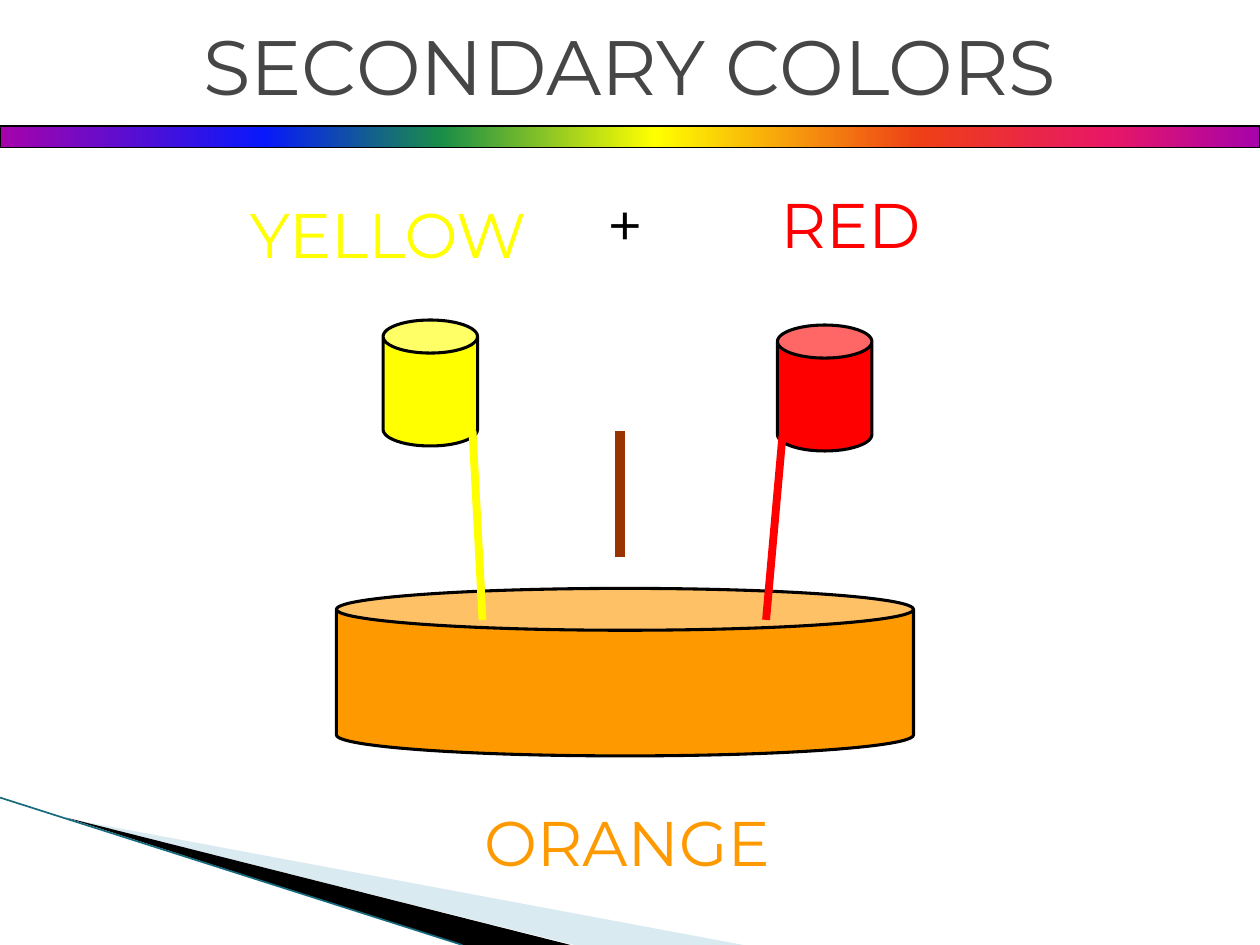
from copy import deepcopy
from typing import NamedTuple

from pptx import Presentation
from pptx.dml.color import RGBColor
from pptx.enum.shapes import MSO_CONNECTOR, MSO_SHAPE
from pptx.enum.text import MSO_ANCHOR, MSO_AUTO_SIZE, PP_ALIGN
from pptx.oxml.ns import qn
from pptx.util import Inches, Pt

CAN, RECT = MSO_SHAPE.CAN, MSO_SHAPE.RECTANGLE
STRAIGHT = MSO_CONNECTOR.STRAIGHT
CENTER, MIDDLE = PP_ALIGN.CENTER, MSO_ANCHOR.MIDDLE
FIXED = MSO_AUTO_SIZE.NONE

BLACK, YELLOW, RED, ORANGE = "000000", "FFFF00", "FF0000", "FF9900"
FONT = "Montserrat"


class Box(NamedTuple):
    left: float
    top: float
    width: float
    height: float


class Can(NamedTuple):
    box: Box
    color: str
    lip: float


class Label(NamedTuple):
    text: str
    box: Box
    color: str


class Stroke(NamedTuple):
    start: tuple[float, float]
    end: tuple[float, float]
    color: str
    weight: float


class Wedge(NamedTuple):
    points: list[tuple[float, float]]
    color: str


WEDGES = [
    Wedge([(0.55, 6.5), (5.9, 7.5), (4.56, 7.5)], "D9EAF1"),
    Wedge([(0.53, 6.49), (4.53, 7.5), (3.67, 7.5)], BLACK),
]
EDGE = Stroke((0, 6.33), (3.67, 7.5), "156B7D", 0.95)
CANS = [
    Can(Box(3.04, 2.54, 0.75, 1), YELLOW, 0.35),
    Can(Box(6.17, 2.58, 0.75, 1), RED, 0.35),
    Can(Box(2.67, 4.67, 4.58, 1.33), ORANGE, 0.25),
]
LABELS = [
    Label("YELLOW", Box(2.08, 1.5, 2, 0.71), YELLOW),
    Label("+", Box(4.75, 1.42, 0.42, 0.71), BLACK),
    Label("RED", Box(6, 1.42, 1.5, 0.71), RED),
    Label("ORANGE", Box(4, 6.33, 1.95, 0.71), ORANGE),
]
STROKES = [
    Stroke((4.92, 3.42), (4.92, 4.42), "993300", 6),
    Stroke((3.75, 3.42), (3.83, 4.92), YELLOW, 4.5),
    Stroke((6.21, 3.46), (6.08, 4.92), RED, 4.5),
]
RAINBOW = [
    (0, "A603AB"), (0.21, "0819FB"), (0.35, "1A8D48"), (0.52, "FFFF00"),
    (0.73, "EE3F17"), (0.88, "E81766"), (1, "A603AB"),
]


def rgb(color: str) -> RGBColor:
    return RGBColor.from_string(color)


def lengths(values) -> list[int]:
    return [Inches(value) for value in values]


def put(target, formats: dict) -> None:
    for name, value in formats.items():
        setattr(target, name, value)


def outline(shape, color: str, weight: float) -> None:
    shape.line.color.rgb = rgb(color)
    shape.line.width = Pt(weight)


def write(shape, text: str, color: str, size: float, wrap: bool) -> None:
    frame = shape.text_frame
    put(frame, {"text": text, "word_wrap": wrap, "auto_size": FIXED})
    para = frame.paragraphs[0]
    para.alignment = CENTER
    put(para.runs[0].font, {"name": FONT, "size": Pt(size)})
    para.runs[0].font.color.rgb = rgb(color)


def draw_wedge(slide, wedge: Wedge) -> None:
    first, *rest = [lengths(point) for point in wedge.points]
    path = slide.shapes.build_freeform(*first)
    path.add_line_segments(rest, close=True)
    shape = path.convert_to_shape()
    shape.shadow.inherit = False
    shape.fill.solid()
    shape.fill.fore_color.rgb = rgb(wedge.color)
    shape.line.fill.background()


def draw_can(slide, can: Can) -> None:
    shape = slide.shapes.add_shape(CAN, *lengths(can.box))
    shape.shadow.inherit = False
    shape.adjustments[0] = can.lip
    shape.fill.solid()
    shape.fill.fore_color.rgb = rgb(can.color)
    outline(shape, BLACK, 1.75)


def draw_label(slide, label: Label) -> None:
    shape = slide.shapes.add_textbox(*lengths(label.box))
    write(shape, label.text, label.color, 36, False)


def draw_stroke(slide, stroke: Stroke) -> None:
    ends = lengths(stroke.start + stroke.end)
    line = slide.shapes.add_connector(STRAIGHT, *ends)
    outline(line, stroke.color, stroke.weight)
    props = line._element.spPr
    props.append(props.makeelement(qn("a:effectLst"), {}))


def draw_rainbow(slide, box: Box) -> None:
    band = slide.shapes.add_shape(RECT, *lengths(box))
    band.shadow.inherit = False
    outline(band, BLACK, 0.75)
    band.fill.gradient()
    band.fill.gradient_angle = 0
    stops = band._element.spPr.find(f"{qn('a:gradFill')}/{qn('a:gsLst')}")
    while len(stops) < len(RAINBOW):
        stops.append(deepcopy(stops[0]))
    for stop, (place, color) in zip(band.fill.gradient_stops, RAINBOW):
        stop.position = place
        stop.color.rgb = rgb(color)


def draw_title(slide, text: str, box: Box) -> None:
    title = slide.shapes.title
    put(title, dict(zip(box._fields, lengths(box))))
    write(title, text, "464646", 44, True)
    title.text_frame.vertical_anchor = MIDDLE


def main() -> None:
    deck = Presentation()
    put(deck, {"slide_width": Inches(10), "slide_height": Inches(7.5)})
    slide = deck.slides.add_slide(deck.slide_layouts[5])
    draw_title(slide, "SECONDARY COLORS", Box(0.5, 0, 9, 1.03))
    for wedge in WEDGES:
        draw_wedge(slide, wedge)
    draw_stroke(slide, EDGE)
    for can in CANS:
        draw_can(slide, can)
    for label in LABELS:
        draw_label(slide, label)
    for stroke in STROKES:
        draw_stroke(slide, stroke)
    draw_rainbow(slide, Box(0, 1, 10, 0.17))
    deck.save("out.pptx")


if __name__ == "__main__":
    main()
